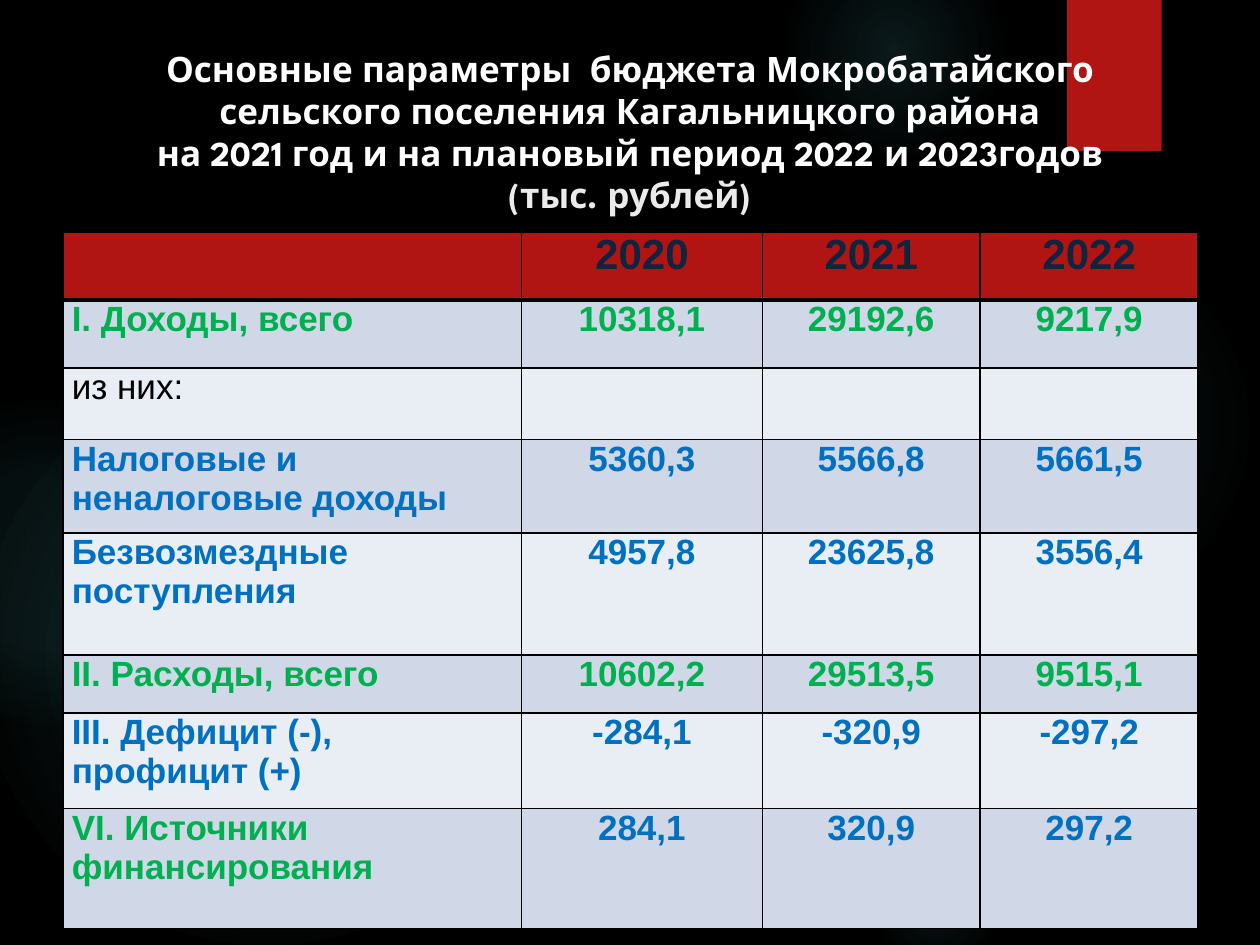
"""Build a one-slide summary of a rural settlement's budget."""
import dataclasses
import typing

import lxml.etree
import pptx
import pptx.dml.color
import pptx.enum.shapes
import pptx.enum.text
import pptx.oxml.ns
import pptx.util

Inches = pptx.util.Inches
Pt = pptx.util.Pt


@dataclasses.dataclass(frozen=True)
class Theme:
    background: str = "000000"
    glow: str = "50B9C1"
    accent: str = "B01513"
    white: str = "FFFFFF"
    unit: str = "EBEBEB"
    header: str = "0F243E"
    total: str = "00B050"
    detail: str = "0070C0"
    plain: str = "000000"
    border: str = "000000"
    bands: tuple[str, str] = ("D0D8E8", "E9EDF4")
    title_font: str = "League Spartan"
    table_font: str = "Arial"
    body_size: int = 20
    header_size: int = 24
    thin: int = 1
    thick: int = 3


class Glow(typing.NamedTuple):
    left: float
    top: float
    size: float
    inner: int
    middle: int
    edge: int


class BudgetRow(typing.NamedTuple):
    height: float
    label: str
    values: tuple[str, str, str]
    label_color: str
    value_color: str
    size: int
    bold: bool = True


THEME = Theme()
GLOWS = (
    Glow(6.89, 1.83, 3.08, 7, 6, 69),
    Glow(6.22, -0.5, 1.75, 14, 7, 73),
    Glow(6.89, 6.67, 1.08, 9, 5, 66),
    Glow(-0.17, 2.92, 4.58, 11, 10, 75),
    Glow(-0.92, 3.17, 2.58, 8, 8, 72),
)
TITLE = (
    "Основные параметры  бюджета Мокробатайского сельского поселения Кагальницкого района",
    "на 2021 год и на плановый период 2022 и 2023годов",
    "(тыс. рублей)",
)
COLUMNS = (3.64, 1.91, 1.73, 1.73)
GREEN, BLUE, BODY = THEME.total, THEME.detail, THEME.body_size
ROWS = (
    BudgetRow(0.54, "", ("2020", "2021", "2022"), THEME.header, THEME.header, THEME.header_size),
    BudgetRow(0.54, "I. Доходы, всего", ("10318,1", "29192,6", "9217,9"), GREEN, GREEN, BODY),
    BudgetRow(0.57, "из них:", ("", "", ""), THEME.plain, THEME.plain, BODY, False),
    BudgetRow(0.74, "Налоговые и неналоговые доходы", ("5360,3", "5566,8", "5661,5"), BLUE, BLUE, BODY),
    BudgetRow(0.97, "Безвозмездные поступления", ("4957,8", "23625,8", "3556,4"), BLUE, BLUE, BODY),
    BudgetRow(0.46, "II. Расходы, всего", ("10602,2", "29513,5", "9515,1"), GREEN, GREEN, BODY),
    BudgetRow(0.76, "III. Дефицит (-), профицит (+)", ("-284,1", "-320,9", "-297,2"), BLUE, BLUE, BODY),
    BudgetRow(0.95, "VI. Источники финансирования", ("284,1", "320,9", "297,2"), GREEN, BLUE, BODY),
)


def rgb(color: str) -> pptx.dml.color.RGBColor:
    return pptx.dml.color.RGBColor.from_string(color)


def add_node(parent, tag: str, **attributes):
    node = lxml.etree.SubElement(parent, pptx.oxml.ns.qn(f"a:{tag}"))
    for name, value in attributes.items():
        node.set(name, str(value))
    return node


def add_color(parent, color: str, opacity: int = 100) -> None:
    node = add_node(parent, "srgbClr", val=color)
    add_node(node, "alpha", val=opacity * 1000)


def style_span(span, font: str, size: int, color: str, bold: bool = True) -> None:
    span.font.name = font
    span.font.size = Pt(size)
    span.font.bold = bold
    span.font.color.rgb = rgb(color)


def draw_glow(page, glow: Glow) -> None:
    shape = page.shapes.add_shape(
        pptx.enum.shapes.MSO_SHAPE.OVAL,
        Inches(glow.left), Inches(glow.top), Inches(glow.size), Inches(glow.size),
    )
    shape.line.fill.background()
    shape.shadow.inherit = False
    properties = shape.fill._xPr
    gradient = add_node(properties, "gradFill", rotWithShape=1)
    stops = add_node(gradient, "gsLst")
    for position, opacity in ((0, glow.inner), (36, glow.middle), (glow.edge, 0)):
        add_color(add_node(stops, "gs", pos=position * 1000), THEME.glow, opacity)
    circle = add_node(gradient, "path", path="circle")
    add_node(circle, "fillToRect", l=50000, t=50000, r=50000, b=50000)
    properties.insert(2, gradient)


def draw_ribbon(page) -> None:
    ribbon = page.shapes.add_shape(
        pptx.enum.shapes.MSO_SHAPE.RECTANGLE, Inches(8.47), 0, Inches(0.75), Inches(1.2)
    )
    ribbon.fill.solid()
    ribbon.fill.fore_color.rgb = rgb(THEME.accent)
    ribbon.line.fill.background()
    ribbon.shadow.inherit = False
    effects = ribbon._element.spPr.find(pptx.oxml.ns.qn("a:effectLst"))
    shadow = add_node(effects, "outerShdw", blurRad=Pt(3), dist=Pt(2), dir=90 * 60000)
    add_color(shadow, "000000", 45)


def draw_title(page) -> None:
    box = page.shapes.add_textbox(Inches(0.5), Inches(0.32), Inches(9), Inches(1.8))
    frame = box.text_frame
    frame.word_wrap = True
    frame.margin_top = Inches(0.06)
    para = frame.paragraphs[0]
    para.text = "\v".join(TITLE)
    para.alignment = pptx.enum.text.PP_ALIGN.CENTER
    for span, color in zip(para.runs, (THEME.white, THEME.white, THEME.unit)):
        style_span(span, THEME.title_font, THEME.body_size, color)


def draw_borders(cell, top: int, bottom: int) -> None:
    properties = cell._tc.get_or_add_tcPr()
    for side, width in (("L", THEME.thin), ("R", THEME.thin), ("T", top), ("B", bottom)):
        line = add_node(properties, f"ln{side}", w=Pt(width))
        add_color(add_node(line, "solidFill"), THEME.border)


def fill_cell(cell, text: str, row: BudgetRow, color: str, centered: bool) -> None:
    cell.margin_left = cell.margin_right = Inches(0.07)
    cell.margin_top = cell.margin_bottom = 0
    para = cell.text_frame.paragraphs[0]
    if text:
        para.text = text
        style_span(para.runs[0], THEME.table_font, row.size, color, row.bold)
    if centered:
        para.alignment = pptx.enum.text.PP_ALIGN.CENTER


def draw_table(page) -> None:
    frame = page.shapes.add_table(
        len(ROWS), len(COLUMNS), Inches(0.5), Inches(1.84),
        Inches(sum(COLUMNS)), Inches(sum(row.height for row in ROWS)),
    )
    table = frame.table
    for column, width in zip(table.columns, COLUMNS):
        column.width = Inches(width)
    for index, row in enumerate(ROWS):
        table.rows[index].height = Inches(row.height)
        band = THEME.bands[(index - 1) % 2] if index else THEME.accent
        top = THEME.thick if index == 1 else THEME.thin
        bottom = THEME.thick if index == 0 else THEME.thin
        for position, text in enumerate((row.label, *row.values)):
            cell = table.cell(index, position)
            color = row.value_color if position else row.label_color
            fill_cell(cell, text, row, color, position > 0)
            draw_borders(cell, top, bottom)
            cell.fill.solid()
            cell.fill.fore_color.rgb = rgb(band)


def main() -> None:
    deck = pptx.Presentation()
    deck.slide_width, deck.slide_height = Inches(10), Inches(7.5)
    page = deck.slides.add_slide(deck.slide_layouts[6])
    page.background.fill.solid()
    page.background.fill.fore_color.rgb = rgb(THEME.background)
    for glow in GLOWS:
        draw_glow(page, glow)
    draw_ribbon(page)
    draw_title(page)
    draw_table(page)
    deck.save("out.pptx")


if __name__ == "__main__":
    main()
